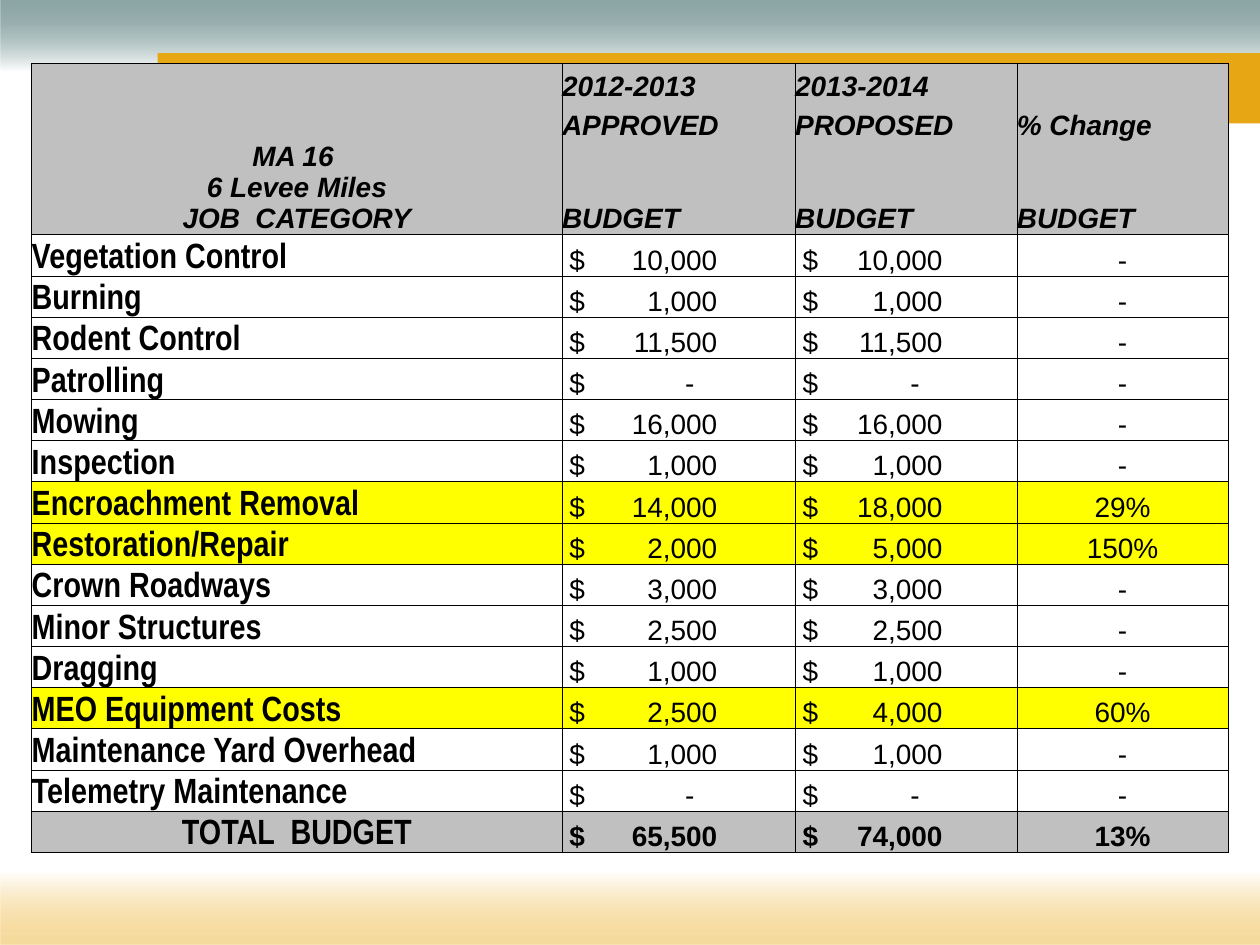
from typing import NamedTuple, Optional

import lxml.etree
import pptx
import pptx.dml.color
import pptx.enum.shapes
import pptx.enum.text
import pptx.oxml.ns
import pptx.util
from pptx.util import Cm, Pt

RGBColor = pptx.dml.color.RGBColor
PP_ALIGN = pptx.enum.text.PP_ALIGN
BLACK = RGBColor(0x00, 0x00, 0x00)
WHITE = RGBColor(0xFF, 0xFF, 0xFF)
GRAY = RGBColor(0xC0, 0xC0, 0xC0)
YELLOW = RGBColor(0xFF, 0xFF, 0x00)
TEAL = RGBColor(0x21, 0x53, 0x52)
GOLD = RGBColor(0xEE, 0xB8, 0x40)
ORANGE = RGBColor(0xE7, 0xA6, 0x14)

COLUMN_WIDTHS = (10.69, 4.7, 4.47, 4.26)
HEADER_ROWS = 3
HEADER_ROW_HEIGHT = 0.79
BODY_ROW_HEIGHT = 0.83
DOLLAR_INDENT = 0.15
AMOUNT_TABS = (2.98, 2.82)
DASH_SETBACK = 0.46


class Band(NamedTuple):
    left: float
    top: float
    width: float
    height: float
    color: RGBColor
    angle: Optional[int] = None


class BudgetLine(NamedTuple):
    category: str
    approved: str
    proposed: str
    change: str = "-"


BANDS = (
    Band(0.02, 0, 25.38, 2.77, TEAL, 270),
    Band(3.18, 1.07, 22.22, 1.42, ORANGE),
    Band(0.02, 16.23, 25.38, 2.82, GOLD, 90),
)
HEADINGS = (
    ("2012-2013", "APPROVED", "BUDGET"),
    ("2013-2014", "PROPOSED", "BUDGET"),
    ("", "% Change", "BUDGET"),
)
BUDGET_LINES = (
    BudgetLine("Vegetation Control", "10,000", "10,000"),
    BudgetLine("Burning", "1,000", "1,000"),
    BudgetLine("Rodent Control", "11,500", "11,500"),
    BudgetLine("Patrolling", "-", "-"),
    BudgetLine("Mowing", "16,000", "16,000"),
    BudgetLine("Inspection", "1,000", "1,000"),
    BudgetLine("Encroachment Removal", "14,000", "18,000", "29%"),
    BudgetLine("Restoration/Repair", "2,000", "5,000", "150%"),
    BudgetLine("Crown Roadways", "3,000", "3,000"),
    BudgetLine("Minor Structures", "2,500", "2,500"),
    BudgetLine("Dragging", "1,000", "1,000"),
    BudgetLine("MEO Equipment Costs", "2,500", "4,000", "60%"),
    BudgetLine("Maintenance Yard Overhead", "1,000", "1,000"),
    BudgetLine("Telemetry Maintenance", "-", "-"),
)
TOTAL = BudgetLine("TOTAL  BUDGET", "65,500", "74,000", "13%")


def add_element(parent, tag: str, **attributes: str):
    return lxml.etree.SubElement(parent, pptx.oxml.ns.qn(tag), attributes)


def draw_band(slide, band: Band) -> None:
    shape = slide.shapes.add_shape(
        pptx.enum.shapes.MSO_SHAPE.RECTANGLE,
        Cm(band.left), Cm(band.top), Cm(band.width), Cm(band.height))
    shape.shadow.inherit = False
    shape.line.fill.background()
    if band.angle is None:
        shape.fill.solid()
        shape.fill.fore_color.rgb = band.color
        return
    shape.fill.gradient()
    shape.fill.gradient_angle = band.angle
    start, end = shape.fill.gradient_stops
    start.position, start.color.rgb = 0, band.color
    end.position, end.color.rgb = 0.52, WHITE
    stop_color = next(shape.fill._xPr.iter(pptx.oxml.ns.qn("a:srgbClr")))
    add_element(stop_color, "a:alpha", val="51000")


def set_borders(cell, hidden: str = "") -> None:
    """Rule every side of the cell except the hidden ones (letters of LRTB)."""
    properties = cell._tc.get_or_add_tcPr()
    for position, side in enumerate("LRTB"):
        line = add_element(properties, f"a:ln{side}", w=str(Pt(0.5)))
        properties.insert(position, line)
        if side in hidden:
            add_element(line, "a:noFill")
        else:
            fill = add_element(line, "a:solidFill")
            add_element(fill, "a:srgbClr", val=str(BLACK))


def format_cell(cell, text: str, fill: Optional[RGBColor], size: float = 16,
                font_name: str = "Arial", bold: bool = False, italic: bool = False,
                alignment: PP_ALIGN = PP_ALIGN.LEFT, indent: float = 0,
                tab: Optional[float] = None, hidden: str = "") -> None:
    cell.margin_left = Cm(indent)
    cell.margin_right = cell.margin_top = cell.margin_bottom = 0
    cell.vertical_anchor = pptx.enum.text.MSO_ANCHOR.BOTTOM
    cell.text_frame.text = text
    for paragraph in cell.text_frame.paragraphs:
        paragraph.alignment = alignment
        if tab is not None:
            tabs = add_element(paragraph._p.get_or_add_pPr(), "a:tabLst")
            add_element(tabs, "a:tab", pos=str(Cm(tab)), algn="r")
        font = paragraph.font
        for font in [paragraph.font] + [run.font for run in paragraph.runs]:
            font.name, font.size = font_name, Pt(size)
            font.bold, font.italic = bold, italic
            font.color.rgb = BLACK
    if fill is None:
        cell.fill.background()
    else:
        cell.fill.solid()
        cell.fill.fore_color.rgb = fill
    set_borders(cell, hidden)


def fill_header(table) -> None:
    table.cell(0, 0).merge(table.cell(HEADER_ROWS - 1, 0))
    format_cell(table.cell(0, 0), "MA 16 \n6 Levee Miles\nJOB  CATEGORY", GRAY,
                bold=True, italic=True, alignment=PP_ALIGN.CENTER)
    for row in range(1, HEADER_ROWS):
        format_cell(table.cell(row, 0), "", GRAY)
    for column, heading in enumerate(HEADINGS, start=1):
        for row, (text, hidden) in enumerate(zip(heading, ("B", "TB", "T"))):
            format_cell(table.cell(row, column), text, GRAY,
                        bold=True, italic=True, hidden=hidden)


def fill_budget_line(table, row: int, line: BudgetLine) -> None:
    is_total = line is TOTAL
    fill = GRAY if is_total else YELLOW if line.change != "-" else None
    format_cell(table.cell(row, 0), line.category, fill, 20, "Arial Narrow", bold=True,
                alignment=PP_ALIGN.CENTER if is_total else PP_ALIGN.LEFT)
    amounts = (line.approved, line.proposed)
    for column, (amount, tab) in enumerate(zip(amounts, AMOUNT_TABS), start=1):
        setback = DASH_SETBACK if amount == "-" else 0
        format_cell(table.cell(row, column), f"$\t{amount}", fill, bold=is_total,
                    indent=DOLLAR_INDENT, tab=tab - setback)
    format_cell(table.cell(row, 3), line.change, fill, bold=is_total,
                alignment=PP_ALIGN.CENTER)


def draw_budget_table(slide) -> None:
    lines = BUDGET_LINES + (TOTAL,)
    heights = [HEADER_ROW_HEIGHT] * HEADER_ROWS + [BODY_ROW_HEIGHT] * len(lines)
    table = slide.shapes.add_table(
        len(heights), len(COLUMN_WIDTHS), Cm(0.64), Cm(1.27),
        Cm(sum(COLUMN_WIDTHS)), Cm(sum(heights))).table
    table.first_row = table.horz_banding = False
    for column, width in zip(table.columns, COLUMN_WIDTHS):
        column.width = Cm(width)
    for row, height in zip(table.rows, heights):
        row.height = Cm(height)
    fill_header(table)
    for row, line in enumerate(lines, start=HEADER_ROWS):
        fill_budget_line(table, row, line)


def main() -> None:
    presentation = pptx.Presentation()
    presentation.slide_width, presentation.slide_height = Cm(25.4), Cm(19.05)
    slide = presentation.slides.add_slide(presentation.slide_layouts[6])
    for band in BANDS:
        draw_band(slide, band)
    draw_budget_table(slide)
    presentation.save("out.pptx")


if __name__ == "__main__":
    main()
